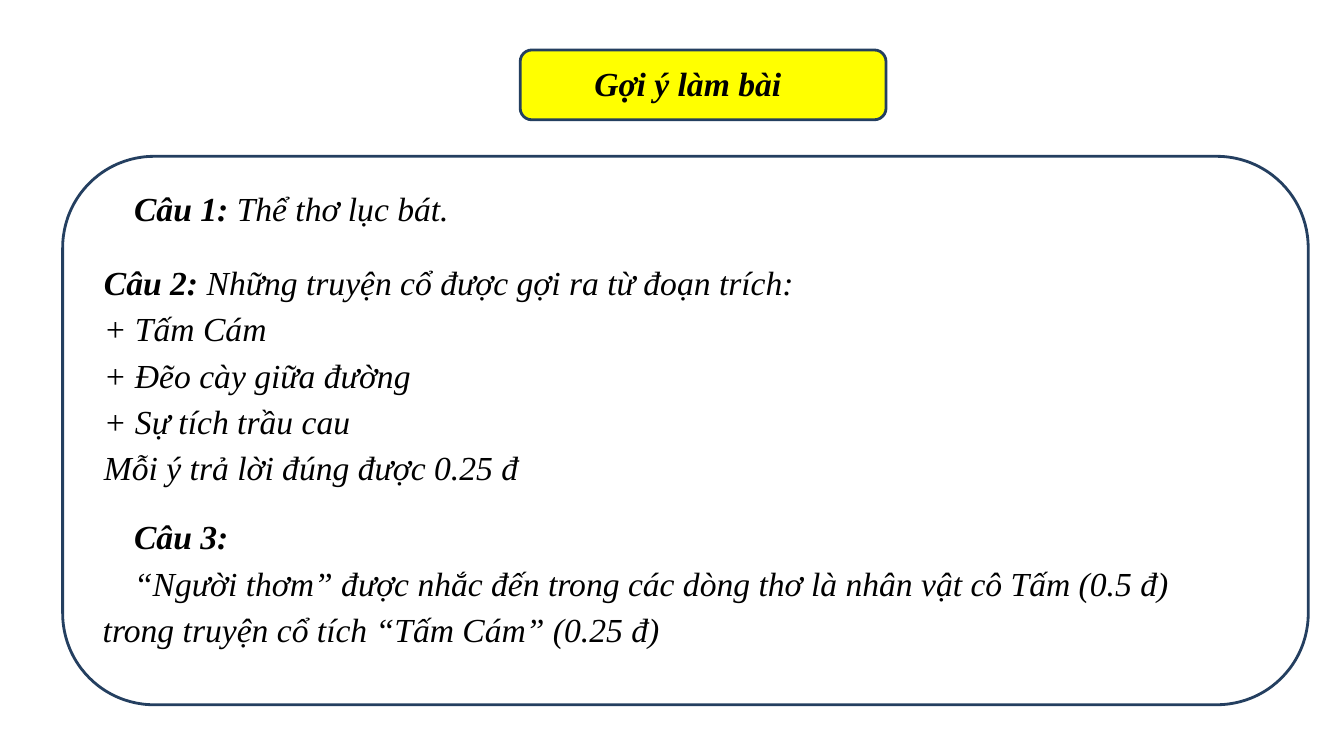
"""Build the answer-guide slide for a Vietnamese reading exercise."""
from pptx import Presentation
from pptx.dml.color import RGBColor
from pptx.enum.shapes import MSO_SHAPE
from pptx.enum.text import MSO_ANCHOR, MSO_AUTO_SIZE, PP_ALIGN
from pptx.util import Cm, Pt


def color(value):
    return RGBColor.from_string(value)


def write_paragraphs(shape, paragraphs, alignment):
    text_frame = shape.text_frame
    text_frame.word_wrap = True
    text_frame.auto_size = MSO_AUTO_SIZE.SHAPE_TO_FIT_TEXT
    text_frame.vertical_anchor = MSO_ANCHOR.TOP
    for index, (bold_text, plain_text) in enumerate(paragraphs):
        paragraph = text_frame.add_paragraph() if index else text_frame.paragraphs[0]
        paragraph.alignment = alignment
        paragraph.line_spacing = 1.15
        properties = paragraph._p.get_or_add_pPr()
        properties.set("marL", "0")
        properties.set("indent", str(Cm(0.79)))
        for text, bold in ((bold_text, True), (plain_text, False)):
            if text:
                run = paragraph.add_run()
                run.text = text
                run.font.name = "Times New Roman"
                run.font.size = Pt(24)
                run.font.bold = bold
                run.font.italic = True
                run.font.color.rgb = color("000000")


presentation = Presentation()
presentation.slide_width = Cm(33.87)
presentation.slide_height = Cm(19.05)
slide = presentation.slides.add_slide(presentation.slide_layouts[5])

frames = [
    ((13.11, 1.26, 9.22, 1.76), "FFFF00"),
    ((1.58, 3.94, 31.39, 13.82), None),
]
for position, fill in frames:
    frame = slide.shapes.add_shape(
        MSO_SHAPE.ROUNDED_RECTANGLE, *[Cm(length) for length in position]
    )
    frame.shadow.inherit = False
    frame.line.color.rgb = color("243F60")
    frame.line.width = Pt(2)
    if fill:
        frame.fill.solid()
        frame.fill.fore_color.rgb = color(fill)
    else:
        frame.fill.background()

title = slide.shapes.title
title.left, title.top, title.width, title.height = Cm(8.48), Cm(1.3), Cm(16.92), Cm(1.35)
write_paragraphs(title, [("Gợi ý làm bài", "")], PP_ALIGN.CENTER)
frame._element.addnext(title._element)

answers = [
    ((2.34, 4.47, 16.92, 1.35), [("Câu 1: ", "Thể thơ lục bát.")]),
    ((1.58, 6.32, 27.81, 6.07), [
        ("Câu 2: ", "Những truyện cổ được gợi ra từ đoạn trích:"),
        ("", "+ Tấm Cám"),
        ("", "+ Đẽo cày giữa đường"),
        ("", "+ Sự tích trầu cau"),
        ("", "Mỗi ý trả lời đúng được 0.25 đ"),
    ]),
    ((2.34, 12.73, 28.63, 3.71), [
        ("Câu 3:", ""),
        ("", "“Người thơm” được nhắc đến trong các dòng thơ là nhân vật cô Tấm (0.5 đ) "
             "trong truyện cổ tích “Tấm Cám” (0.25 đ)"),
    ]),
]
for position, paragraphs in answers:
    answer = slide.shapes.add_textbox(*[Cm(length) for length in position])
    write_paragraphs(answer, paragraphs, PP_ALIGN.LEFT)

presentation.save("out.pptx")
